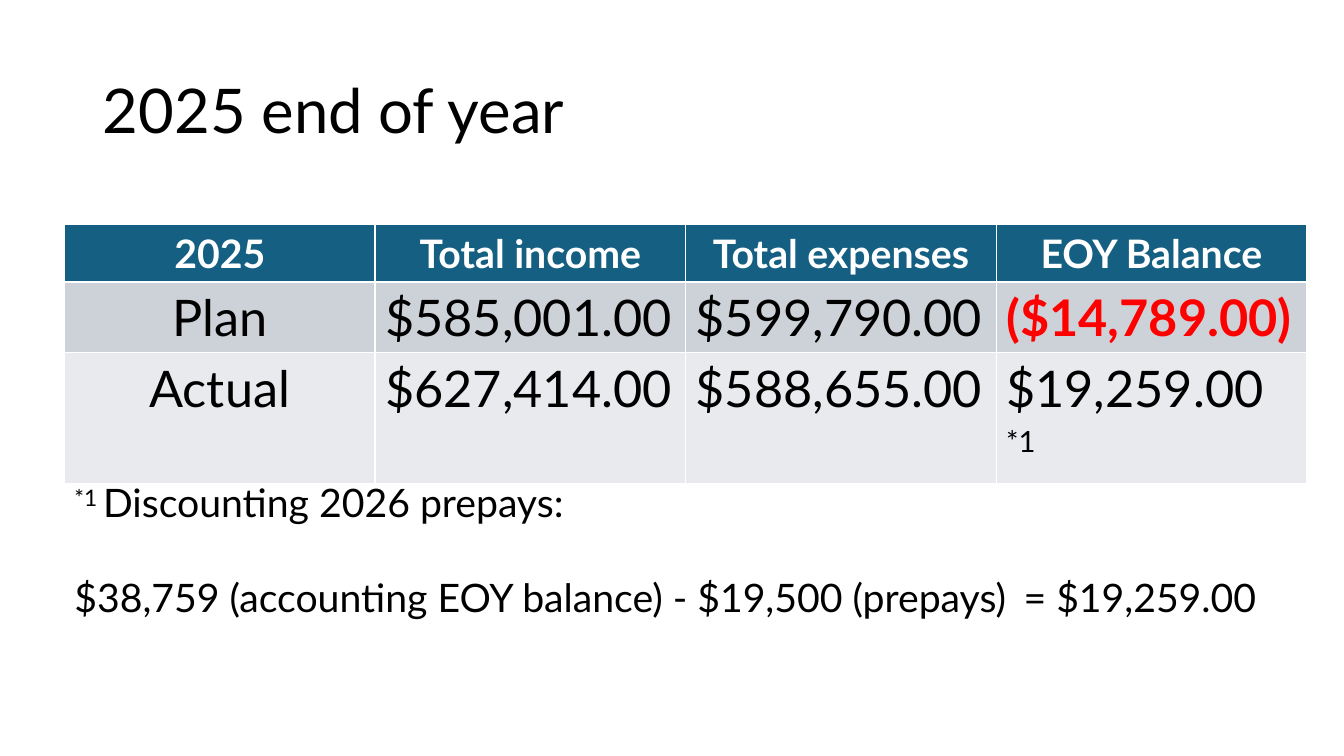
from pptx import Presentation
from pptx.dml.color import RGBColor
from pptx.enum.text import MSO_ANCHOR, MSO_AUTO_SIZE, PP_ALIGN
from pptx.util import Pt

SCALE = 9144
TITLE_ONLY = 5
LEFT, CENTER = PP_ALIGN.LEFT, PP_ALIGN.CENTER
MIDDLE, TOP = MSO_ANCHOR.MIDDLE, MSO_ANCHOR.TOP
NO_FIT, GROW = MSO_AUTO_SIZE.NONE, MSO_AUTO_SIZE.SHAPE_TO_FIT_TEXT


def px(length):
    return length * SCALE


def color(hex_code):
    return RGBColor.from_string(hex_code)


class BudgetSlide:
    font = "Lato"
    ink, paper, alert = "000000", "FFFFFF", "FF0000"
    header_fill = "156082"
    band_fills = ["CCD2D8", "E8EAED"]
    title_size, body_size, amount_size = 44, 28, 36

    def __init__(self, deck):
        self.page = deck.slides.add_slide(deck.slide_layouts[TITLE_ONLY])

    def add_span(self, para, text, size, ink=ink, bold=False, raised=False, tracking=0):
        span = para.add_run()
        span.text = text
        span.font.name = self.font
        span.font.size = Pt(size)
        span.font.bold = bold
        span.font.color.rgb = color(ink)
        properties = span._r.get_or_add_rPr()
        if raised:
            properties.set("baseline", "30000")
        if tracking:
            properties.set("spc", str(tracking))

    def title(self, text, left, top, width, height):
        box = self.page.shapes.title
        box.left, box.top, box.width, box.height = map(px, (left, top, width, height))
        frame = box.text_frame
        frame.auto_size = NO_FIT
        frame.vertical_anchor = MIDDLE
        para = frame.paragraphs[0]
        para.alignment = LEFT
        para.line_spacing = 0.9
        self.add_span(para, text, self.title_size)

    def fill_cell(self, cell, spans, fill, align):
        cell.fill.solid()
        cell.fill.fore_color.rgb = color(fill)
        para = cell.text_frame.paragraphs[0]
        para.alignment = align
        for text, style in spans:
            self.add_span(para, text, **style)

    def table(self, headings, records, left, top, column_width, row_heights):
        table = self.page.shapes.add_table(
            len(row_heights), len(headings), px(left), px(top),
            px(column_width * len(headings)), px(sum(row_heights))).table
        for column in table.columns:
            column.width = px(column_width)
        for row, height in zip(table.rows, row_heights):
            row.height = px(height)
        heading_style = dict(size=self.body_size, ink=self.paper, bold=True)
        for index, heading in enumerate(headings):
            self.fill_cell(table.cell(0, index), [(heading, heading_style)],
                           self.header_fill, CENTER)
        for number, (record, fill) in enumerate(zip(records, self.band_fills), 1):
            for index, spans in enumerate(record):
                styled = [(text, dict(size=self.amount_size) | style) for text, style in spans]
                self.fill_cell(table.cell(number, index), styled, fill,
                               LEFT if index else CENTER)

    def text_box(self, lines, left, top, width, height, gap):
        box = self.page.shapes.add_textbox(*map(px, (left, top, width, height)))
        frame = box.text_frame
        frame.word_wrap = True
        frame.auto_size = GROW
        frame.vertical_anchor = TOP
        for index, spans in enumerate(lines):
            para = frame.add_paragraph() if index else frame.paragraphs[0]
            if index:
                para.space_before = Pt(gap)
            for text, style in spans:
                self.add_span(para, text, self.body_size, **style)


def main():
    deck = Presentation()
    deck.slide_width, deck.slide_height = px(1333), px(750)
    slide = BudgetSlide(deck)
    slide.title("2025 end of year", 92, 40, 1150, 145)

    raised = dict(raised=True)
    loss = dict(ink=slide.alert, bold=True)
    records = [
        [[("Plan", {})], [("$585,001.00", {})], [("$599,790.00", {})],
         [("($14,789.00)", loss)]],
        [[("Actual", {})], [("$627,414.00", {})], [("$588,655.00", {})],
         [("$19,259.00 ", {}), ("*1", raised)]],
    ]
    slide.table(["2025", "Total income", "Total expenses", "EOY Balance"],
                records, 64, 223, 308, [56, 70, 130])

    notes = [
        [("*1 ", raised), ("Discounting 2026 prepays:", {})],
        [("$38,759 (accounting EOY balance) - $19,500 (prepays)", {}),
         (" ", dict(tracking=540)), ("= $19,259.00", {})],
    ]
    slide.text_box(notes, 64, 470, 1233, 151, 33.6)
    deck.save("out.pptx")


if __name__ == "__main__":
    main()
